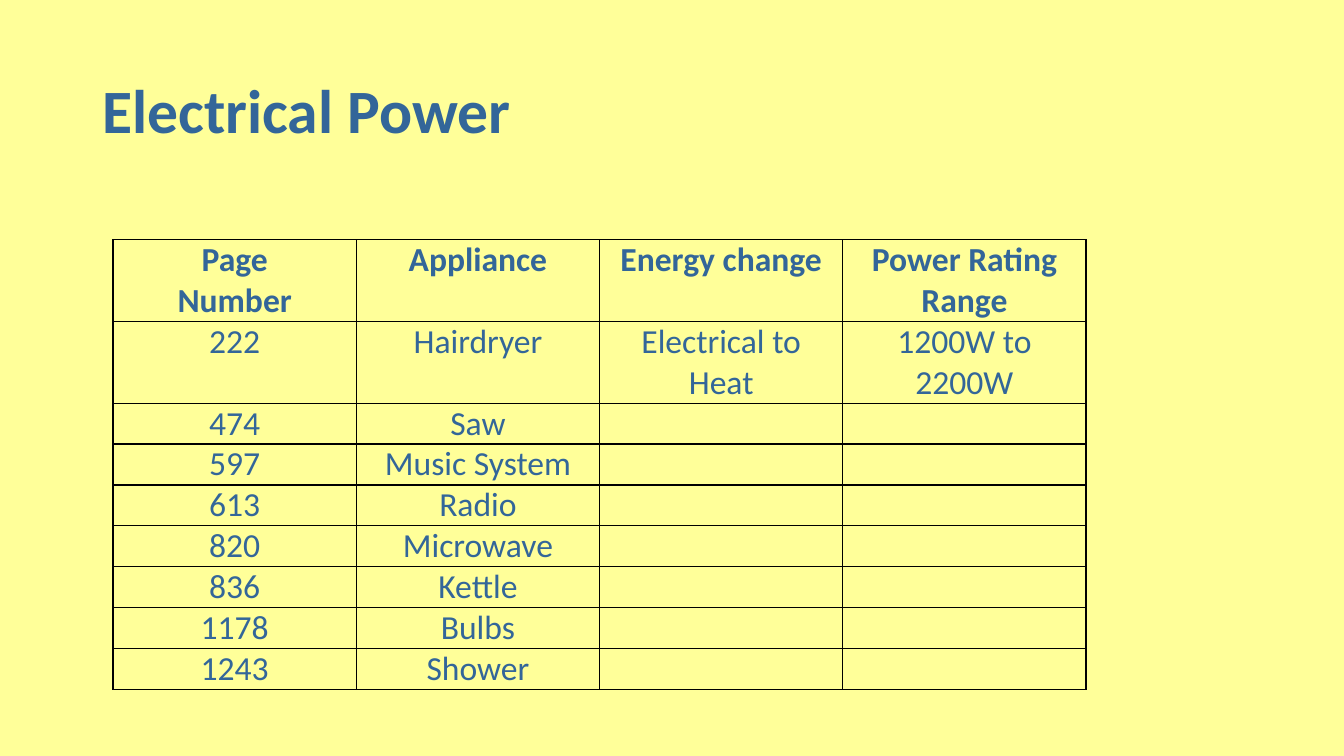
from lxml import etree
from pptx import Presentation
from pptx.dml.color import RGBColor
from pptx.enum.text import MSO_ANCHOR, PP_ALIGN
from pptx.oxml.ns import qn
from pptx.util import Cm, Pt

CENTER = PP_ALIGN.CENTER
MIDDLE = MSO_ANCHOR.MIDDLE
FONT = "Calibri"
BLUE, BLACK, YELLOW = "336699", "000000", "FFFF99"
COLUMN_WIDTH = 6.13
LINE_HEIGHT = 1.03
HEADINGS = ["Page\nNumber", "Appliance", "Energy change", "Power Rating\nRange"]
APPLIANCES = [
    ["222", "Hairdryer", "Electrical to Heat", "1200W to 2200W"],
    ["474", "Saw", "", ""],
    ["597", "Music System", "", ""],
    ["613", "Radio", "", ""],
    ["820", "Microwave", "", ""],
    ["836", "Kettle", "", ""],
    ["1178", "Bulbs", "", ""],
    ["1243", "Shower", "", ""],
]


def color(hex_code):
    """Turn a hex string into a colour."""
    return RGBColor.from_string(hex_code)


def format_runs(paragraph, size, bold):
    """Apply the slide's font to every run of a paragraph."""
    for run in paragraph.runs:
        run.font.name = FONT
        run.font.size = Pt(size)
        run.font.bold = bold
        run.font.color.rgb = color(BLUE)


def add_title(slide, wording):
    """Add the slide heading."""
    heading = slide.shapes.add_textbox(Cm(2.33), Cm(1.01), Cm(29.21), Cm(3.68))
    frame = heading.text_frame
    frame.word_wrap = True
    frame.vertical_anchor = MIDDLE
    frame.text = wording
    frame.paragraphs[0].line_spacing = 0.9
    format_runs(frame.paragraphs[0], 44, True)


def add_borders(cell):
    """Draw a thin line on all four sides of a cell."""
    properties = cell._tc.get_or_add_tcPr()
    for side in ("a:lnL", "a:lnR", "a:lnT", "a:lnB"):
        line = etree.SubElement(properties, qn(side), w=str(Pt(1)))
        fill = etree.SubElement(line, qn("a:solidFill"))
        etree.SubElement(fill, qn("a:srgbClr"), val=BLACK)


def fill_cell(cell, wording, bold):
    """Write one cell and set its margins, borders and fill."""
    cell.margin_left = cell.margin_right = Cm(0.18)
    cell.margin_top = cell.margin_bottom = 0
    add_borders(cell)
    cell.fill.background()
    cell.text_frame.text = wording
    for paragraph in cell.text_frame.paragraphs:
        paragraph.alignment = CENTER
        format_runs(paragraph, 24, bold)


def add_appliance_table(slide):
    """Add the table of appliances and their power ratings."""
    rows = [HEADINGS] + APPLIANCES
    line_counts = [2, 2] + [1] * (len(rows) - 2)
    frame = slide.shapes.add_table(
        len(rows), len(HEADINGS), Cm(2.85), Cm(6.04),
        Cm(COLUMN_WIDTH * len(HEADINGS)), Cm(LINE_HEIGHT * sum(line_counts)))
    table = frame.table
    table.first_row = False
    table.horz_banding = False
    for column in table.columns:
        column.width = Cm(COLUMN_WIDTH)
    for row_index, (entries, lines) in enumerate(zip(rows, line_counts)):
        table.rows[row_index].height = Cm(LINE_HEIGHT * lines)
        for column_index, wording in enumerate(entries):
            fill_cell(table.cell(row_index, column_index), wording, row_index == 0)


def main():
    """Build and save the slide."""
    presentation = Presentation()
    presentation.slide_width = Cm(33.87)
    presentation.slide_height = Cm(19.05)
    slide = presentation.slides.add_slide(presentation.slide_layouts[6])
    slide.background.fill.solid()
    slide.background.fill.fore_color.rgb = color(YELLOW)
    add_title(slide, "Electrical Power")
    add_appliance_table(slide)
    presentation.save("out.pptx")


if __name__ == "__main__":
    main()
